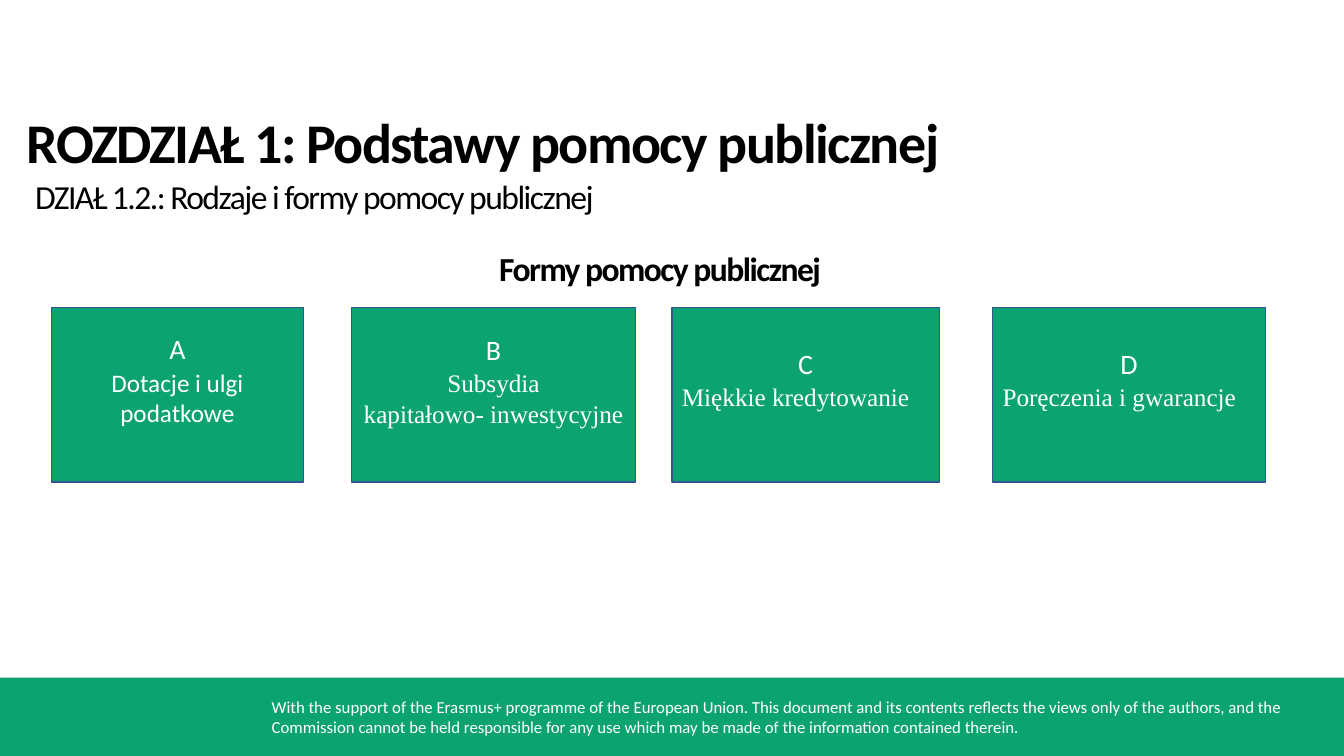
from dataclasses import dataclass

from pptx import Presentation
from pptx.dml.color import RGBColor
from pptx.enum.shapes import MSO_SHAPE
from pptx.enum.text import MSO_ANCHOR, PP_ALIGN
from pptx.util import Pt

RECTANGLE = MSO_SHAPE.RECTANGLE
PROCESS = MSO_SHAPE.FLOWCHART_PROCESS
TOP = MSO_ANCHOR.TOP
LEFT = PP_ALIGN.LEFT
CENTER = PP_ALIGN.CENTER


@dataclass(frozen=True)
class Theme:
    green: RGBColor = RGBColor(0x0C, 0xA3, 0x73)
    outline: RGBColor = RGBColor(0x32, 0x54, 0x91)
    black: RGBColor = RGBColor(0, 0, 0)
    white: RGBColor = RGBColor(255, 255, 255)
    sans: str = "Calibri"
    serif: str = "Times New Roman"
    title: int = 40
    subtitle: int = 24
    letter: int = 20
    body: int = 18
    footer: int = 12
    tracking: int = -110


THEME = Theme()
SLIDE_WIDTH, SLIDE_HEIGHT = 960, 540
CARD_TOP, CARD_HEIGHT = 219.6, 124.6

CARDS = [
    (36.7, 180, 17.5, "A", "Dotacje i ulgi podatkowe", THEME.sans, CENTER),
    (251, 203, 18, "B", "Subsydia\vkapitałowo- inwestycyjne", THEME.serif, CENTER),
    (480, 191, 28, "C", "Miękkie kredytowanie", THEME.serif, LEFT),
    (709, 195, 28, "D", "Poręczenia i gwarancje", THEME.serif, LEFT),
]


def write_paragraph(paragraph, text, size, color, font=THEME.sans, bold=False,
                    align=LEFT, before=0, indent=0, tracking=0):
    paragraph.text = text
    paragraph.alignment = align
    paragraph.space_before = Pt(before)
    if indent:
        properties = paragraph._p.get_or_add_pPr()
        properties.set("marL", str(Pt(indent)))
        properties.set("indent", "0")
    for run in paragraph.runs:
        run.font.size = Pt(size)
        run.font.name = font
        run.font.bold = bold
        run.font.color.rgb = color
        if tracking:
            run.font._element.set("spc", str(tracking))


def add_text_box(slide, left, top, width, height):
    shape = slide.shapes.add_textbox(Pt(left), Pt(top), Pt(width), Pt(height))
    shape.text_frame.word_wrap = True
    return shape.text_frame


def add_filled_shape(slide, kind, left, top, width, height):
    shape = slide.shapes.add_shape(kind, Pt(left), Pt(top), Pt(width), Pt(height))
    shape.shadow.inherit = False
    shape.fill.solid()
    shape.fill.fore_color.rgb = THEME.green
    return shape


def add_footer(slide, left, top, width, height):
    band = add_filled_shape(slide, RECTANGLE, left, top, width, height)
    band.line.fill.background()
    frame = add_text_box(slide, left + 187, top + 10, width - 210, 36)
    write_paragraph(
        frame.paragraphs[0],
        "With the support of the Erasmus+ programme of the European Union. "
        "This document and its contents reflects the views only of the authors, "
        "and the Commission cannot be held responsible for any use which may be "
        "made of the information contained therein.",
        THEME.footer, THEME.white)


def add_headings(slide, left, top, width, height):
    frame = add_text_box(slide, left, top, width, height)
    write_paragraph(frame.paragraphs[0], "ROZDZIAŁ 1: Podstawy pomocy publicznej",
                    THEME.title, THEME.black, bold=True, indent=12,
                    tracking=THEME.tracking)
    write_paragraph(frame.add_paragraph(),
                    "DZIAŁ 1.2.: Rodzaje i formy pomocy publicznej",
                    THEME.subtitle, THEME.black, before=1, indent=18,
                    tracking=THEME.tracking)
    write_paragraph(frame.add_paragraph(), "Formy pomocy publicznej",
                    THEME.subtitle, THEME.black, bold=True, align=CENTER,
                    before=23, tracking=THEME.tracking)


def add_card(slide, left, top, width, height, inset, letter, text, font, align):
    card = add_filled_shape(slide, PROCESS, left, top, width, height)
    card.line.color.rgb = THEME.outline
    card.line.width = Pt(1)
    frame = card.text_frame
    frame.word_wrap = True
    frame.vertical_anchor = TOP
    frame.margin_top = Pt(inset)
    write_paragraph(frame.paragraphs[0], letter, THEME.letter, THEME.white,
                    align=CENTER, tracking=THEME.tracking)
    write_paragraph(frame.add_paragraph(), text, THEME.body, THEME.white,
                    font=font, align=align, before=1)


def main():
    presentation = Presentation()
    presentation.slide_width = Pt(SLIDE_WIDTH)
    presentation.slide_height = Pt(SLIDE_HEIGHT)
    slide = presentation.slides.add_slide(presentation.slide_layouts[6])
    add_footer(slide, 0, 484, SLIDE_WIDTH, 56)
    add_headings(slide, 0, 73, 943, 140)
    for left, width, *content in CARDS:
        add_card(slide, left, CARD_TOP, width, CARD_HEIGHT, *content)
    presentation.save("out.pptx")


if __name__ == "__main__":
    main()
